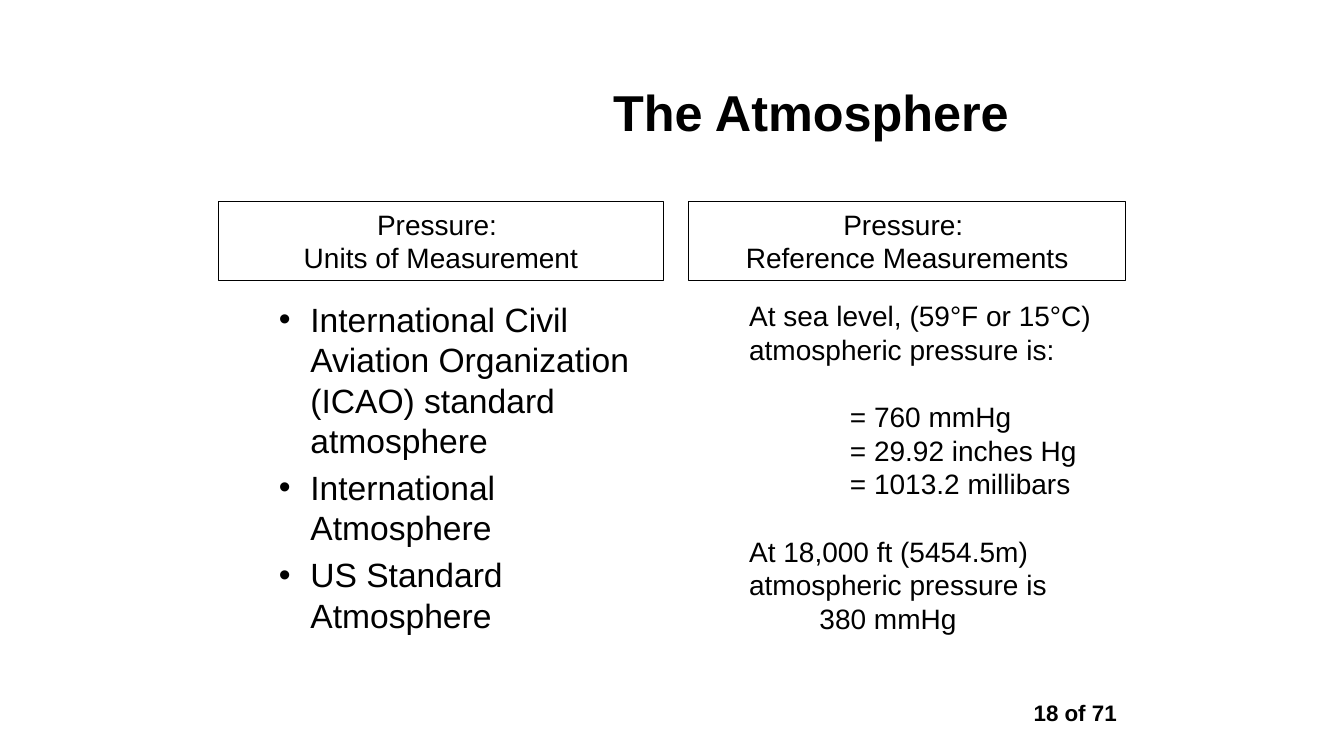
from dataclasses import dataclass

from lxml import etree
from pptx import Presentation
from pptx.dml.color import RGBColor
from pptx.enum.shapes import MSO_SHAPE
from pptx.enum.text import MSO_ANCHOR, MSO_AUTO_SIZE, PP_ALIGN
from pptx.oxml.ns import qn
from pptx.util import Emu, Pt

EMU_PER_PX = 9525
RECTANGLE = MSO_SHAPE.RECTANGLE
TOP, MIDDLE = MSO_ANCHOR.TOP, MSO_ANCHOR.MIDDLE
LEFT, CENTER = PP_ALIGN.LEFT, PP_ALIGN.CENTER
FIXED_SIZE = MSO_AUTO_SIZE.NONE


@dataclass(frozen=True)
class Theme:
    font: str = "Arial"
    ink: RGBColor = RGBColor(0, 0, 0)
    title: int = 36
    bullets: int = 24
    text: int = 20
    page: int = 16
    outline: float = 0.75


@dataclass(frozen=True)
class Box:
    left: int
    top: int
    width: int
    height: int


@dataclass(frozen=True)
class Line:
    text: str
    size: int
    bold: bool = False
    align: PP_ALIGN = LEFT
    margin: int = 0
    hanging: int = 0
    bullet: str = ""
    before: float = 0
    spacing: float = 1.0


@dataclass(frozen=True)
class Heading:
    box: Box
    topic: str


THEME = Theme()
SLIDE_WIDTH, SLIDE_HEIGHT = 1280, 720
TITLE_BOX = Box(330, 40, 885, 132)
UNITS_BOX = Box(208, 280, 424, 368)
REFERENCE_BOX = Box(656, 280, 416, 362)
PAGE_BOX = Box(968, 664, 112, 33)
HEADINGS = [
    Heading(Box(208, 192, 424, 75), "Units of Measurement"),
    Heading(Box(656, 192, 416, 75), "Reference Measurements"),
]
STANDARDS = [
    "International Civil Aviation Organization (ICAO) standard atmosphere",
    "International Atmosphere",
    "US Standard Atmosphere",
]
TEXT_MARGIN, RESULT_MARGIN, VALUE_MARGIN = 48, 115, 144
GROUP_GAP = 24
REFERENCES = [
    Line("At sea level, (59°F or 15°C) atmospheric pressure is:", THEME.text, margin=TEXT_MARGIN),
    Line("= 760 mmHg", THEME.text, margin=VALUE_MARGIN, before=GROUP_GAP),
    Line("= 29.92 inches Hg", THEME.text, margin=VALUE_MARGIN),
    Line("= 1013.2 millibars", THEME.text, margin=VALUE_MARGIN),
    Line("At 18,000 ft (5454.5m)", THEME.text, margin=TEXT_MARGIN, before=GROUP_GAP),
    Line("atmospheric pressure is", THEME.text, margin=TEXT_MARGIN),
    Line("380 mmHg", THEME.text, margin=RESULT_MARGIN),
]


def px(length: int) -> Emu:
    return Emu(length * EMU_PER_PX)


def bounds(box: Box) -> tuple[Emu, Emu, Emu, Emu]:
    return px(box.left), px(box.top), px(box.width), px(box.height)


def apply(target, values: dict) -> None:
    """Set each named attribute of the target."""
    for name, value in values.items():
        setattr(target, name, value)


def place(shape, box: Box) -> None:
    apply(shape, dict(zip(("left", "top", "width", "height"), bounds(box))))


def write(shape, lines: list[Line], anchor: MSO_ANCHOR = TOP) -> None:
    frame = shape.text_frame
    apply(frame, {"word_wrap": True, "auto_size": FIXED_SIZE, "vertical_anchor": anchor})
    for index, line in enumerate(lines):
        paragraph = frame.add_paragraph() if index else frame.paragraphs[0]
        properties = paragraph._p.get_or_add_pPr()
        properties.set("marL", str(px(line.margin)))
        properties.set("indent", str(px(-line.hanging)))
        if line.bullet:
            etree.SubElement(properties, qn("a:buChar")).set("char", line.bullet)
        apply(paragraph, {
            "alignment": line.align,
            "space_before": Pt(line.before),
            "line_spacing": line.spacing,
        })
        run = paragraph.add_run()
        run.text = line.text
        apply(run.font, {"name": THEME.font, "size": Pt(line.size), "bold": line.bold})
        run.font.color.rgb = THEME.ink


def add_heading(slide, heading: Heading) -> None:
    shape = slide.shapes.add_shape(RECTANGLE, *bounds(heading.box))
    shape.shadow.inherit = False
    shape.fill.background()
    shape.line.color.rgb = THEME.ink
    shape.line.width = Pt(THEME.outline)
    lines = [Line(text, THEME.text, align=CENTER) for text in ("Pressure: ", heading.topic)]
    write(shape, lines, MIDDLE)


def add_text(slide, box: Box, lines: list[Line]) -> None:
    write(slide.shapes.add_textbox(*bounds(box)), lines)


def main() -> None:
    presentation = Presentation()
    apply(presentation, {"slide_width": px(SLIDE_WIDTH), "slide_height": px(SLIDE_HEIGHT)})
    slide = presentation.slides.add_slide(presentation.slide_layouts[1])
    title, body = slide.placeholders

    place(title, TITLE_BOX)
    write(title, [Line("The Atmosphere", THEME.title, bold=True, align=CENTER)], MIDDLE)

    place(body, UNITS_BOX)
    write(body, [
        Line(text, THEME.bullets, margin=78, hanging=30, bullet="•", before=4.8 if index else 0)
        for index, text in enumerate(STANDARDS)
    ])

    for heading in HEADINGS:
        add_heading(slide, heading)
    add_text(slide, REFERENCE_BOX, REFERENCES)
    add_text(slide, PAGE_BOX, [
        Line("18 of 71", THEME.page, bold=True, align=CENTER, spacing=0.9)
    ])
    presentation.save("out.pptx")


if __name__ == "__main__":
    main()
